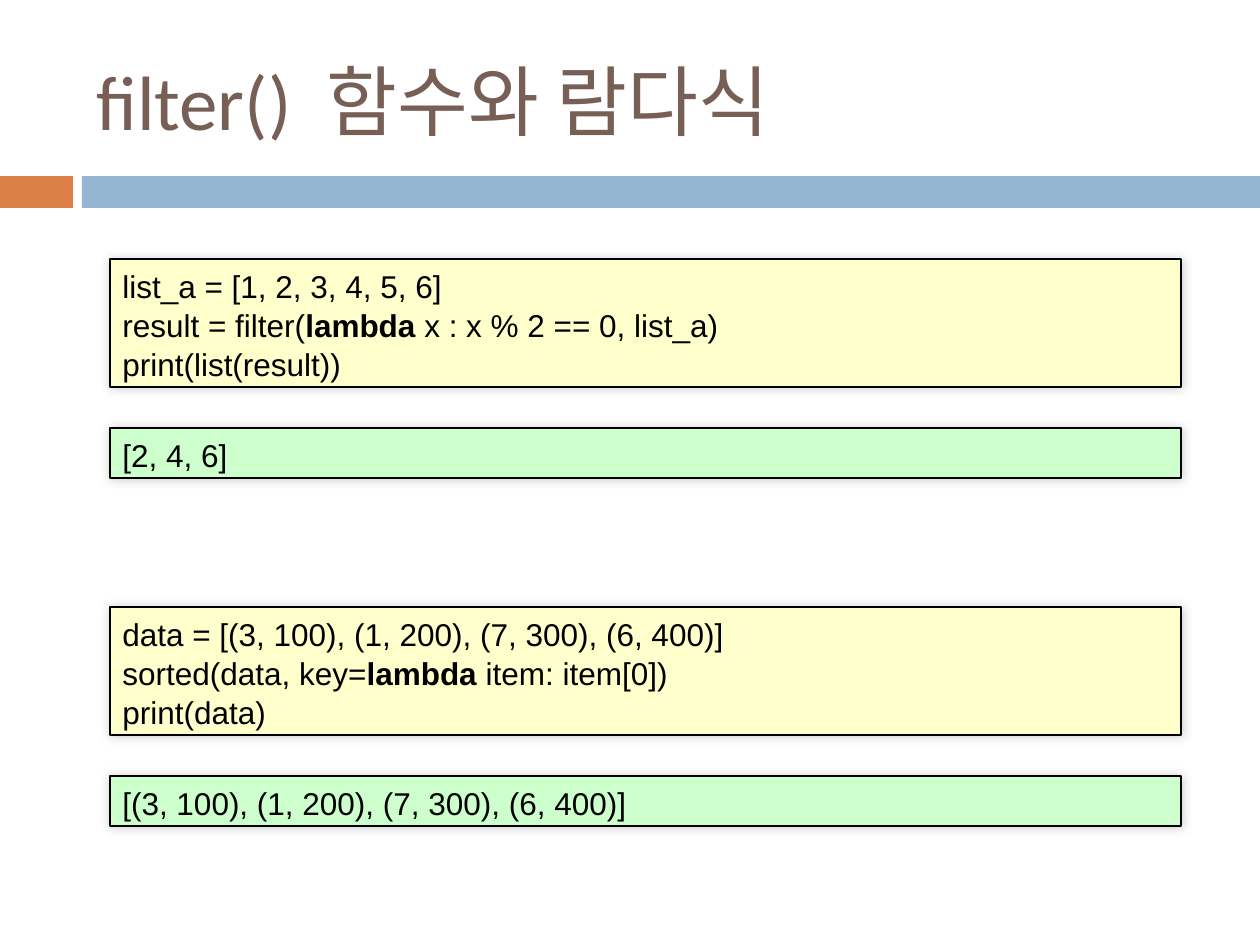
from lxml.etree import SubElement
from pptx import Presentation
from pptx.dml.color import RGBColor
from pptx.enum.shapes import MSO_SHAPE
from pptx.enum.text import MSO_ANCHOR, PP_ALIGN
from pptx.oxml.ns import qn
from pptx.util import Pt

PX = 914400 / 126
ORANGE = RGBColor(0xDD, 0x80, 0x47)
BLUE = RGBColor(0x94, 0xB6, 0xD2)
BROWN = RGBColor(0x77, 0x5F, 0x55)
YELLOW = RGBColor(0xFF, 0xFF, 0xCC)
GREEN = RGBColor(0xCC, 0xFF, 0xCC)
BLACK = RGBColor(0, 0, 0)

BOX_LEFT, BOX_WIDTH = 110, 1071
CODE_HEIGHT, OUTPUT_HEIGHT, OUTPUT_OFFSET = 128, 50, 169

EXAMPLES = [
    (
        259,
        [
            [("list_a = [1, 2, 3, 4, 5, 6]", False)],
            [("result = filter(", False), ("lambda", True), (" x : x % 2 == 0, list_a)", False)],
            [("print(list(result))", False)],
        ],
        "[2, 4, 6]",
    ),
    (
        607,
        [
            [("data = [(3, 100), (1, 200), (7, 300), (6, 400)]", False)],
            [("sorted(data, key=", False), ("lambda ", True), ("item: item[0])", False)],
            [("print(data)", False)],
        ],
        "[(3, 100), (1, 200), (7, 300), (6, 400)]",
    ),
]


def emu(*lengths):
    return [round(n * PX) for n in lengths]


class Deck:
    """Holds the style and the current slide."""

    code_font, code_size = "Arial", Pt(18)
    title_font, title_size = "Calibri", Pt(44)

    def __init__(self, prs):
        self.slide = prs.slides.add_slide(prs.slide_layouts[6])

    def run(self, p, text, font, size, color, bold=False):
        r = p.add_run()
        r.text = text
        r.font.name, r.font.size, r.font.bold = font, size, bold
        r.font.color.rgb = color
        return r

    def bar(self, left, top, width, height, color):
        sp = self.slide.shapes.add_shape(MSO_SHAPE.RECTANGLE, *emu(left, top, width, height))
        sp.shadow.inherit = False
        sp.fill.solid()
        sp.fill.fore_color.rgb = color
        sp.line.fill.background()
        return sp

    def title(self, left, top, width, height, head, tail):
        tf = self.slide.shapes.add_textbox(*emu(left, top, width, height)).text_frame
        tf.word_wrap = True
        tf.vertical_anchor = MSO_ANCHOR.MIDDLE
        for text, spacing in ((head, 0), (" ", 1000), (tail, 0)):
            r = self.run(tf.paragraphs[0], text, self.title_font, self.title_size, BROWN)
            r.font._element.set("spc", str(spacing))

    def soft_shadow(self, sp):
        effects = sp._element.spPr.find(qn("a:effectLst"))
        shadow = SubElement(effects, qn("a:outerShdw"), blurRad=str(Pt(6)), dist="0",
                            dir=str(315 * 60000), rotWithShape="0")
        color = SubElement(shadow, qn("a:srgbClr"), val=str(BLACK))
        SubElement(color, qn("a:alpha"), val="20000")

    def box(self, top, height, color, lines):
        sp = self.bar(BOX_LEFT, top, BOX_WIDTH, height, color)
        sp.line.color.rgb = BLACK
        sp.line.width = Pt(0.75)
        self.soft_shadow(sp)
        tf = sp.text_frame
        tf.word_wrap = True
        tf.vertical_anchor = MSO_ANCHOR.TOP
        for i, line in enumerate(lines):
            p = tf.add_paragraph() if i else tf.paragraphs[0]
            p.alignment = PP_ALIGN.LEFT
            p.line_spacing = 1.04
            for text, bold in line:
                self.run(p, text, self.code_font, self.code_size, BLACK, bold)


def main():
    prs = Presentation()
    prs.slide_width, prs.slide_height = emu(1260, 945)
    deck = Deck(prs)
    deck.bar(0, 176, 73, 32, ORANGE)
    deck.bar(82, 176, 1178, 32, BLUE)
    deck.title(84, 32, 1124, 136, "filter()", "함수와 람다식")
    for top, code, output in EXAMPLES:
        deck.box(top, CODE_HEIGHT, YELLOW, code)
        deck.box(top + OUTPUT_OFFSET, OUTPUT_HEIGHT, GREEN, [[(output, False)]])
    prs.save("out.pptx")


if __name__ == "__main__":
    main()
